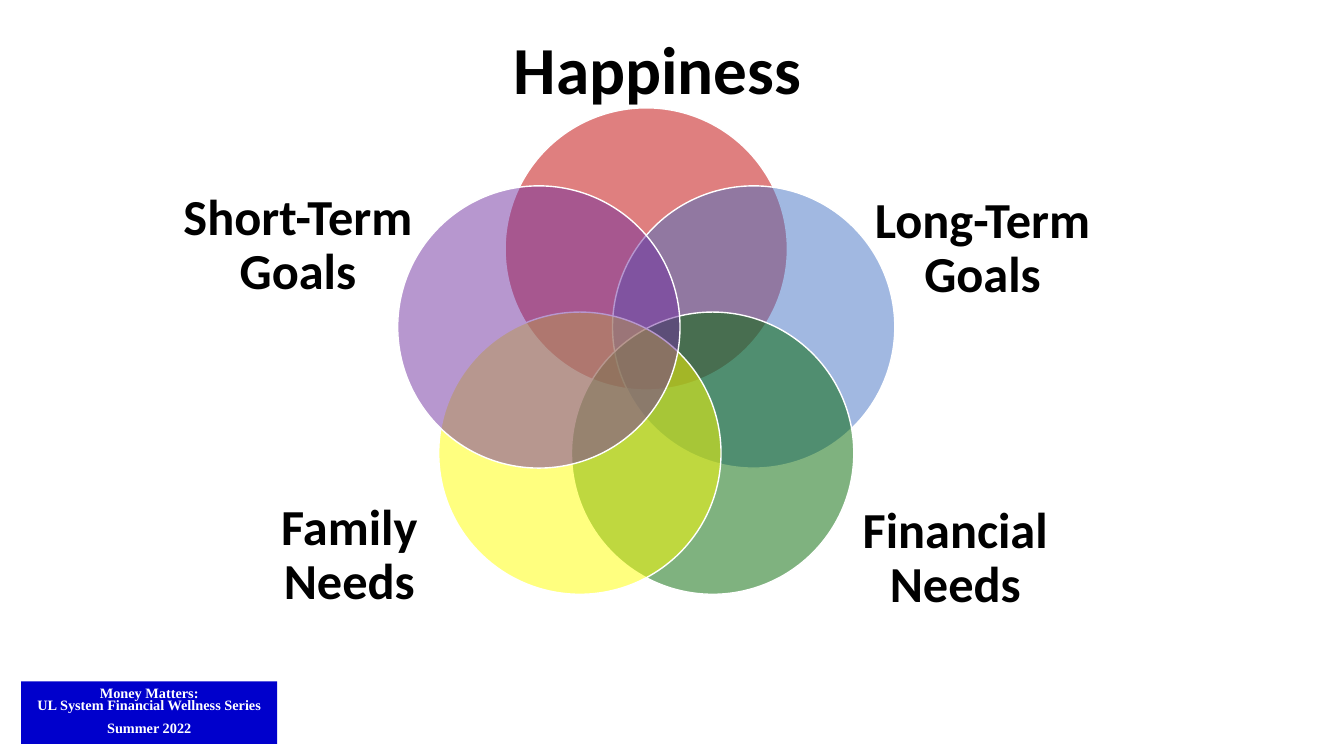
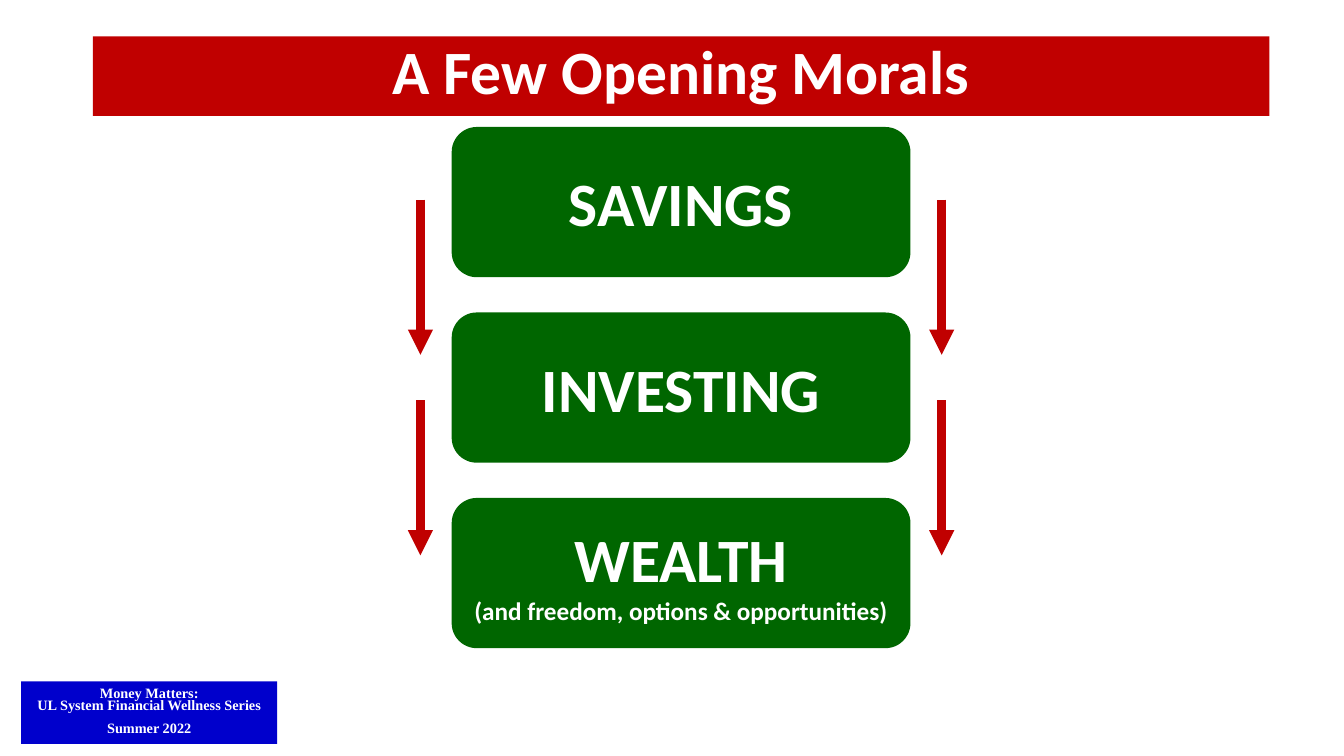
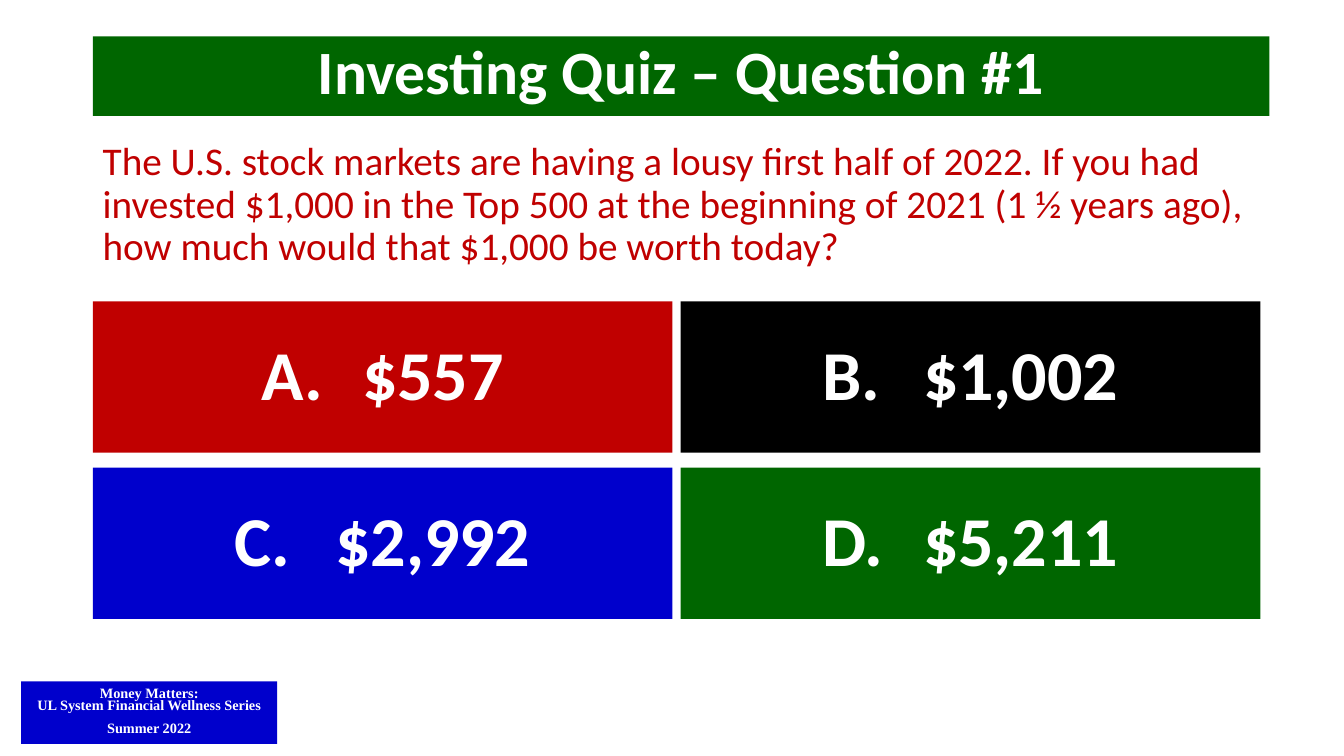
import math

import pptx
import pptx.dml.color
import pptx.enum.dml
import pptx.enum.shapes
import pptx.enum.text
import pptx.oxml
import pptx.oxml.ns
import pptx.util

Inches = pptx.util.Inches
RGBColor = pptx.dml.color.RGBColor
Shapes = pptx.enum.shapes.MSO_SHAPE
Anchor = pptx.enum.text.MSO_ANCHOR
Align = pptx.enum.text.PP_ALIGN

# Shared colours and fonts
RED = RGBColor(0xC0, 0x00, 0x00)
GREEN = RGBColor(0x00, 0x66, 0x00)
BLUE = RGBColor(0x00, 0x00, 0xCC)
STEEL = RGBColor(0x44, 0x72, 0xC4)
YELLOW = RGBColor(0xFF, 0xFF, 0x00)
PURPLE = RGBColor(0x70, 0x30, 0xA0)
BLACK = RGBColor(0x00, 0x00, 0x00)
WHITE = RGBColor(0xFF, 0xFF, 0xFF)
BODY_FONT = "Calibri"
FOOTER_FONT = "Times New Roman"

# Content: footer lines with the space before each, in points
FOOTER = [
    ("Money Matters:", 0),
    ("UL System Financial Wellness Series", 0),
    ("Summer 2022", 8.2),
]
CIRCLE_COLORS = [RED, STEEL, GREEN, YELLOW, PURPLE]
CIRCLE_LABELS = [
    ("Long-Term Goals", (8.29, 1.45, 2.91, 2.04)),
    ("Financial Needs", (8.43, 4.53, 2.09, 2.04)),
    ("Family Needs", (2.42, 4.5, 2.09, 2.04)),
    ("Short-Term Goals", (1.5, 1.42, 2.91, 2.04)),
]
STEPS = [
    [("SAVINGS", 44)],
    [("INVESTING", 44)],
    [("WEALTH", 44), ("(and freedom, options & opportunities)", 18)],
]
QUESTION = (
    "The U.S. stock markets are having a lousy first half of 2022. If you had "
    "invested $1,000 in the Top 500 at the beginning of 2021 (1 ½ years ago), "
    "how much would that $1,000 be worth today?"
)
ANSWERS = [
    ("A.\t$557", RED),
    ("B.\t$1,002", BLACK),
    ("C.\t$2,992", BLUE),
    ("D.\t$5,211", GREEN),
]


def write(shape, text, size, color=WHITE, bold=True, font=BODY_FONT,
          align=Align.CENTER, spacing=0.9, before=0):
    """Put one paragraph in a shape, after any text already there."""
    frame = shape.text_frame
    paragraph = frame.add_paragraph() if frame.text else frame.paragraphs[0]
    paragraph.alignment = align
    paragraph.line_spacing = spacing
    paragraph.space_before = pptx.util.Pt(before)
    run = paragraph.add_run()
    run.text = text
    run.font.name = font
    run.font.size = pptx.util.Pt(size)
    run.font.bold = bold
    run.font.color.rgb = color


def set_frame(shape, anchor, margin=None):
    frame = shape.text_frame
    frame.word_wrap = True
    frame.auto_size = pptx.enum.text.MSO_AUTO_SIZE.NONE
    frame.vertical_anchor = anchor
    if margin is not None:
        frame.margin_left = frame.margin_right = Inches(margin)
        frame.margin_top = frame.margin_bottom = Inches(margin)


def add_box(slide, kind, place, color, anchor=Anchor.MIDDLE):
    box = slide.shapes.add_shape(kind, *map(Inches, place))
    box.shadow.inherit = False
    box.fill.solid()
    box.fill.fore_color.rgb = color
    box.line.fill.background()
    set_frame(box, anchor)
    return box


def add_text_box(slide, place, anchor, margin=None):
    box = slide.shapes.add_textbox(*map(Inches, place))
    set_frame(box, anchor, margin)
    return box


def place_title(slide, place, anchor, margin=None):
    title = slide.shapes.title
    title.left, title.top, title.width, title.height = map(Inches, place)
    set_frame(title, anchor, margin)
    return title


def add_band_title(slide, text, color):
    title = place_title(slide, (0.92, 0.36, 11.67, 0.79), Anchor.TOP)
    title.fill.solid()
    title.fill.fore_color.rgb = color
    write(title, text, 44)


def add_footer(presentation, slide):
    """Draw the footer band and hand it to the master, so all slides show it."""
    footer = add_box(slide, Shapes.RECTANGLE, (0.21, 6.76, 2.54, 0.62), BLUE)
    for text, before in FOOTER:
        write(footer, text, 10.2, font=FOOTER_FONT, spacing=0.7, before=before)
    footer.element.nvSpPr.cNvPr.set("id", "20")
    presentation.slide_master.shapes.element.append(footer.element)


def add_circle(slide, center_x, center_y, diameter, color):
    place = (center_x - diameter / 2, center_y - diameter / 2, diameter, diameter)
    circle = add_box(slide, Shapes.OVAL, place, color)
    circle.line.color.rgb = WHITE
    circle.line.width = pptx.util.Pt(1)
    # Half transparent fill
    fill = circle.element.spPr.find(pptx.oxml.ns.qn("a:solidFill"))
    alpha = pptx.oxml.parse_xml(
        f'<a:alpha {pptx.oxml.ns.nsdecls("a")} val="50000"/>')
    fill[0].append(alpha)


def add_down_arrow(slide, x, top, length):
    arrow = slide.shapes.add_connector(
        pptx.enum.shapes.MSO_CONNECTOR.STRAIGHT,
        Inches(x), Inches(top), Inches(x), Inches(top + length))
    arrow.line.color.rgb = RED
    arrow.line.width = pptx.util.Pt(6)
    namespace = pptx.oxml.ns.nsdecls("a")
    arrow.line._get_or_add_ln().append(
        pptx.oxml.parse_xml(f'<a:tailEnd {namespace} type="triangle"/>'))
    arrow.element.spPr.append(pptx.oxml.parse_xml(f"<a:effectLst {namespace}/>"))


def build_happiness(slide):
    title = place_title(slide, (4.9, 0.12, 3.25, 1.2), Anchor.MIDDLE, margin=0)
    write(title, "Happiness", 48, color=BLACK)
    # Five circles evenly spaced around a ring, clockwise from the top
    ring_x, ring_y, ring_radius = 6.41, 3.59, 1.12
    for index, color in enumerate(CIRCLE_COLORS):
        angle = 2 * math.pi * index / len(CIRCLE_COLORS)
        add_circle(slide, ring_x + ring_radius * math.sin(angle),
                   ring_y - ring_radius * math.cos(angle), 2.8, color)
    for text, place in CIRCLE_LABELS:
        label = add_text_box(slide, place, Anchor.MIDDLE, margin=0)
        write(label, text, 36, color=BLACK)


def build_morals(slide):
    add_band_title(slide, "A Few Opening Morals", RED)
    for index, lines in enumerate(STEPS):
        step = add_box(slide, Shapes.ROUNDED_RECTANGLE,
                       (4.48, 1.26 + 1.84 * index, 4.55, 1.49), GREEN)
        for text, size in lines:
            write(step, text, size, spacing=1.0)
    # An arrow on each side, from each step to the next
    for top in (1.98, 3.97):
        for x in (4.17, 9.34):
            add_down_arrow(slide, x, top, 1.54)


def build_quiz(slide):
    add_band_title(slide, "Investing Quiz – Question #1", GREEN)
    question = add_text_box(slide, (0.92, 1.36, 11.88, 1.5), Anchor.TOP)
    write(question, QUESTION, 28, color=RED, bold=False, align=Align.LEFT)
    # Two by two grid of answers
    width, height, gap_x, gap_y = 5.75, 1.5, 0.08, 0.15
    for index, (text, color) in enumerate(ANSWERS):
        row, column = divmod(index, 2)
        place = (0.92 + column * (width + gap_x),
                 2.99 + row * (height + gap_y), width, height)
        answer = add_box(slide, Shapes.RECTANGLE, place, color, Anchor.TOP)
        answer.text_frame.margin_top = Inches(0.38)
        write(answer, text, 50)


def main():
    presentation = pptx.Presentation()
    presentation.slide_width = Inches(13.33)
    presentation.slide_height = Inches(7.5)
    title_only = presentation.slide_layouts[5]
    slides = []
    for build in (build_happiness, build_morals, build_quiz):
        slide = presentation.slides.add_slide(title_only)
        build(slide)
        slides.append(slide)
    add_footer(presentation, slides[0])
    presentation.save("out.pptx")


if __name__ == "__main__":
    main()
